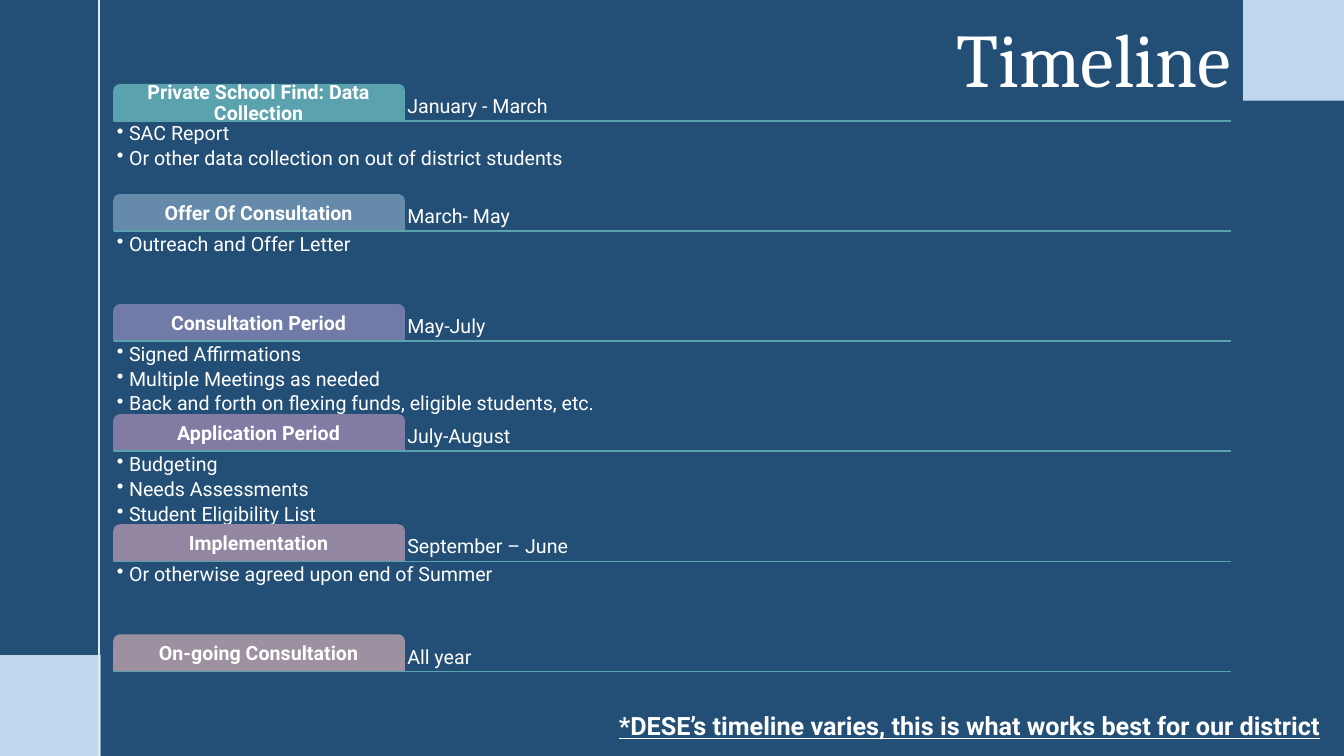
from dataclasses import dataclass

import lxml.etree
import pptx
import pptx.dml.color
import pptx.enum.shapes
import pptx.enum.text
import pptx.oxml.ns
import pptx.util

Inches = pptx.util.Inches
Align = pptx.enum.text.PP_ALIGN
Anchor = pptx.enum.text.MSO_ANCHOR
Preset = pptx.enum.shapes.MSO_SHAPE

COLORS = {
    "background": "234F77",
    "square": "C0D8ED",
    "margin": "DEECEF",
    "rule": "5AA2AE",
    "text": "FFFFFF",
}
LEFT, RIGHT = 1.13, 12.21
TAB_WIDTH, TAB_HEIGHT = 2.88, 0.36
FIRST_TOP, LAST_TOP = 0.84, 6.3
INSET = 0.03


@dataclass(frozen=True)
class Phase:
    name: str
    period: str
    color: str
    tasks: tuple[str, ...] = ()


PHASES = [
    Phase("Private School Find: Data Collection", "January - March", "5AA2AE",
          ("SAC Report", "Or other data collection on out of district students")),
    Phase("Offer Of Consultation", "March- May", "668AAA", ("Outreach and Offer Letter",)),
    Phase("Consultation Period", "May-July", "717BA7",
          ("Signed Affirmations", "Multiple Meetings as needed",
           "Back and forth on flexing funds, eligible students, etc.")),
    Phase("Application Period", "July-August", "827CA4",
          ("Budgeting", "Needs Assessments", "Student Eligibility List")),
    Phase("Implementation", "September – June", "9386A2",
          ("Or otherwise agreed upon end of Summer",)),
    Phase("On-going Consultation", "All year", "9D90A0"),
]


def rgb(value: str) -> pptx.dml.color.RGBColor:
    return pptx.dml.color.RGBColor.from_string(value)


def add_block(page, preset, left: float, top: float, width: float, height: float,
              color: str, outlined: bool = False):
    block = page.shapes.add_shape(
        preset, Inches(left), Inches(top), Inches(width), Inches(height))
    block.shadow.inherit = False
    block.fill.solid()
    block.fill.fore_color.rgb = rgb(color)
    if outlined:
        block.line.color.rgb = rgb(color)
        block.line.width = pptx.util.Pt(1)
    else:
        block.line.fill.background()
    return block


def add_line(page, x1: float, y1: float, x2: float, y2: float,
             color: str, weight: float) -> None:
    line = page.shapes.add_connector(
        pptx.enum.shapes.MSO_CONNECTOR.STRAIGHT,
        Inches(x1), Inches(y1), Inches(x2), Inches(y2))
    line.line.color.rgb = rgb(color)
    line.line.width = pptx.util.Pt(weight)
    lxml.etree.SubElement(line._element.spPr, pptx.oxml.ns.qn("a:effectLst"))


def add_bullet(para) -> None:
    para.level = 1
    properties = para._p.get_or_add_pPr()
    properties.set("marL", str(Inches(0.12)))
    properties.set("indent", str(Inches(-0.12)))
    bullet = lxml.etree.SubElement(properties, pptx.oxml.ns.qn("a:buChar"))
    bullet.set("char", "•")


def add_text(page, lines: tuple[str, ...], left: float, top: float, width: float,
             height: float, *, size: float = 14, font: str = "Roboto",
             bold: bool = False, underline: bool = False, align=Align.LEFT,
             anchor=Anchor.TOP, inset: float = INSET, spacing: float = 0.9,
             bulleted: bool = False) -> None:
    box = page.shapes.add_textbox(
        Inches(left), Inches(top), Inches(width), Inches(height))
    frame = box.text_frame
    frame.word_wrap = True
    frame.vertical_anchor = anchor
    frame.margin_left = frame.margin_right = Inches(inset)
    frame.margin_top = frame.margin_bottom = Inches(min(inset, 0.05))
    for index, line in enumerate(lines):
        para = frame.paragraphs[0] if index == 0 else frame.add_paragraph()
        para.alignment = align
        para.line_spacing = spacing
        if bulleted:
            para.space_after = pptx.util.Pt(2.7)
            add_bullet(para)
        span = para.add_run()
        span.text = line
        span.font.size = pptx.util.Pt(size)
        span.font.name = font
        span.font.bold = bold
        span.font.underline = underline
        span.font.color.rgb = rgb(COLORS["text"])


def add_phase(page, phase: Phase, top: float) -> None:
    bottom = top + TAB_HEIGHT
    tab = add_block(page, Preset.ROUND_2_SAME_RECTANGLE, LEFT, top,
                    TAB_WIDTH, TAB_HEIGHT, phase.color, outlined=True)
    tab.adjustments[0] = 0.167
    add_text(page, (phase.name,), LEFT + 0.01, top + 0.02, 2.85, 0.34,
             bold=True, align=Align.CENTER, anchor=Anchor.MIDDLE)
    period_left = LEFT + TAB_WIDTH
    add_text(page, (phase.period,), period_left, top, RIGHT - period_left,
             TAB_HEIGHT, anchor=Anchor.BOTTOM)
    add_line(page, LEFT, bottom, RIGHT, bottom, COLORS["rule"], 1)
    if phase.tasks:
        add_text(page, phase.tasks, LEFT, bottom, RIGHT - LEFT, 0.72, bulleted=True)


def main() -> None:
    deck = pptx.Presentation()
    deck.slide_width, deck.slide_height = Inches(13.33), Inches(7.5)
    page = deck.slides.add_slide(deck.slide_layouts[6])
    page.background.fill.solid()
    page.background.fill.fore_color.rgb = rgb(COLORS["background"])

    # Corner squares and margin line
    add_block(page, Preset.RECTANGLE, 0, 6.5, 1, 1, COLORS["square"])
    add_line(page, 0.98, 0, 0.98, 7.5, COLORS["margin"], 1.5)
    add_block(page, Preset.RECTANGLE, 12.33, 0, 1, 1, COLORS["square"])

    # Title
    add_text(page, ("Timeline",), -0.11, 0, 12.42, 1.08, size=54, font="Cambria",
             align=Align.RIGHT, anchor=Anchor.BOTTOM, inset=0.1)

    # Phases, evenly spaced
    pitch = (LAST_TOP - FIRST_TOP) / (len(PHASES) - 1)
    for index, phase in enumerate(PHASES):
        add_phase(page, phase, FIRST_TOP + index * pitch)

    # Footnote
    add_text(page, ("*DESE’s timeline varies, this is what works best for our district",),
             6.04, 7, 7.3, 0.4, size=18, bold=True, underline=True,
             inset=0.1, spacing=1.0)

    deck.save("out.pptx")


if __name__ == "__main__":
    main()
